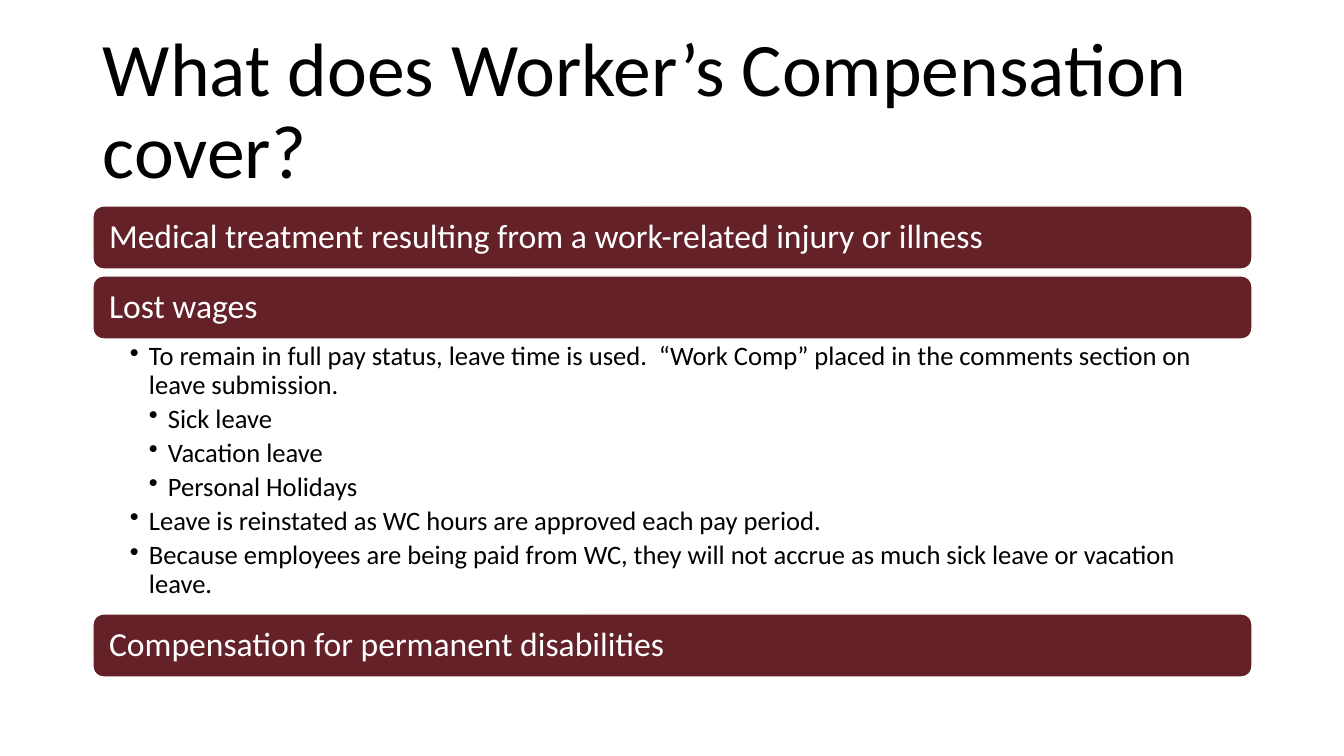
"""Build the slide on what Worker's Compensation covers."""
from lxml import etree
from pptx import Presentation
from pptx import util as u
from pptx.dml.color import RGBColor
from pptx.enum import shapes, text
from pptx.oxml.ns import qn

SCALE = 914400 / 100.8
FONT = "Calibri"
COLOURS = {"bar": "642228", "light": "FFFFFF", "dark": "000000"}
LEFT, WIDTH = 93, 1159
BAR_HEIGHT = 63
INDENT = 19

BARS = [
    (206, "Medical treatment resulting from a work-related injury or illness"),
    (276, "Lost wages"),
    (614, "Compensation for permanent disabilities"),
]
DETAILS = [
    (1, "To remain in full pay status, leave time is used.  “Work Comp” placed in the "
        "comments section on leave submission."),
    (2, "Sick leave"),
    (2, "Vacation leave"),
    (2, "Personal Holidays"),
    (1, "Leave is reinstated as WC hours are approved each pay period."),
    (1, "Because employees are being paid from WC, they will not accrue as much sick "
        "leave or vacation leave."),
]


def px(length):
    """Turn pixels into EMU."""
    return u.Emu(round(length * SCALE))


def colour(name):
    """Look up a named colour."""
    return RGBColor.from_string(COLOURS[name])


def set_frame(frame, insets, anchor):
    """Set wrapping, insets and vertical anchor of a text frame."""
    frame.word_wrap = True
    frame.vertical_anchor = anchor
    frame.margin_left, frame.margin_top, frame.margin_right, frame.margin_bottom = map(px, insets)


def write_para(para, words, size, shade):
    """Fill a left-aligned paragraph with styled words."""
    para.text = words
    para.alignment = text.PP_ALIGN.LEFT
    para.line_spacing = 0.9
    para.font.name = FONT
    para.font.size = u.Pt(size)
    para.font.color.rgb = colour(shade)


def add_bullet(para, level):
    """Give a paragraph a hanging bullet at its level."""
    para.level = level
    props = para._p.get_or_add_pPr()
    props.set("marL", str(px(INDENT * level)))
    props.set("indent", str(-px(INDENT)))
    etree.SubElement(props, qn("a:buChar")).set("char", "•")


def add_title(page, words):
    """Add the slide heading."""
    box = page.shapes.add_textbox(px(LEFT), px(40), px(WIDTH), px(146))
    set_frame(box.text_frame, (10, 5, 10, 5), text.MSO_ANCHOR.MIDDLE)
    write_para(box.text_frame.paragraphs[0], words, 54, "dark")


def add_bar(page, top, words):
    """Add a rounded bar with its label."""
    bar = page.shapes.add_shape(
        shapes.MSO_SHAPE.ROUNDED_RECTANGLE, px(LEFT), px(top), px(WIDTH), px(BAR_HEIGHT))
    bar.shadow.inherit = False
    bar.fill.solid()
    bar.fill.fore_color.rgb = colour("bar")
    bar.line.color.rgb = colour("light")
    bar.line.width = u.Pt(1)
    set_frame(bar.text_frame, (13, 10, 13, 10), text.MSO_ANCHOR.MIDDLE)
    write_para(bar.text_frame.paragraphs[0], words, 24, "light")


def add_details(page, top, height, items):
    """Add the bulleted list of (level, words) items."""
    box = page.shapes.add_textbox(px(LEFT), px(top), px(WIDTH), px(height))
    frame = box.text_frame
    set_frame(frame, (37, 3, 19, 3), text.MSO_ANCHOR.TOP)
    for index, (level, words) in enumerate(items):
        para = frame.add_paragraph() if index else frame.paragraphs[0]
        write_para(para, words, 19, "dark")
        para.space_after = u.Pt(3.8)
        add_bullet(para, level)


def main():
    """Build and save the deck."""
    deck = Presentation()
    deck.slide_width, deck.slide_height = px(1344), px(756)
    page = deck.slides.add_slide(deck.slide_layouts[6])
    add_title(page, "What does Worker’s Compensation cover?")
    for top, words in BARS:
        add_bar(page, top, words)
    add_details(page, 340, 274, DETAILS)
    deck.save("out.pptx")


if __name__ == "__main__":
    main()
